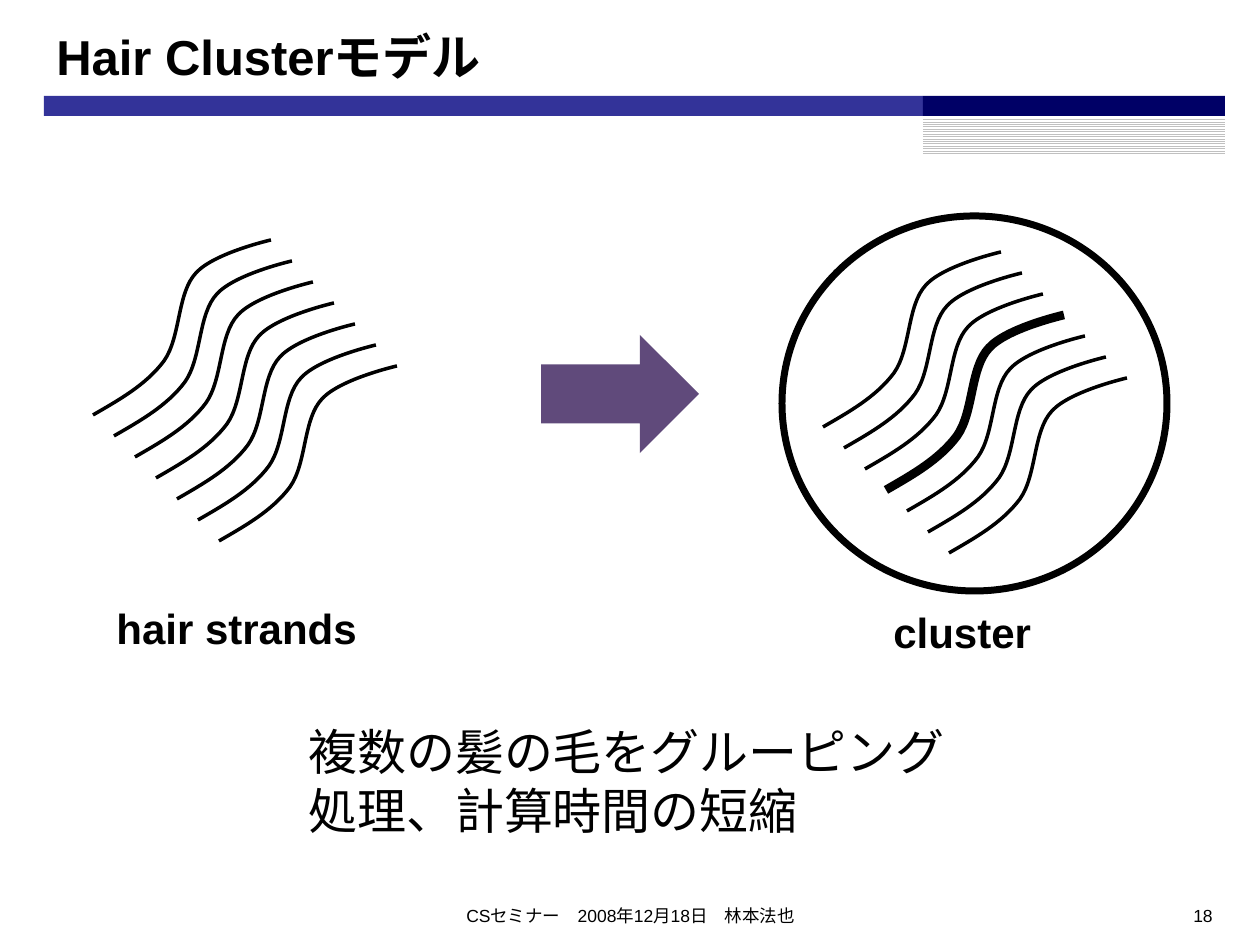
from dataclasses import dataclass

import lxml.etree
import pptx
import pptx.dml.color
import pptx.enum.dml
import pptx.enum.shapes
import pptx.enum.text
import pptx.oxml.ns
import pptx.util

EMU_PER_PX = 914400 / 126
SHAPE = pptx.enum.shapes.MSO_SHAPE
ALIGN = pptx.enum.text.PP_ALIGN
ANCHOR = pptx.enum.text.MSO_ANCHOR


@dataclass(frozen=True)
class Theme:
    font: str = "Arial"
    ink: str = "000000"
    paper: str = "FFFFFF"
    bar: str = "333399"
    bar_end: str = "000066"
    hatch: str = "C0C0C0"
    arrow: str = "604A7B"
    heading: int = 28
    label: int = 24
    footer: int = 10
    thin: int = 2
    ring: int = 4
    guide: int = 5


THEME = Theme()


@dataclass(frozen=True)
class Area:
    left: int
    top: int
    width: int
    height: int

    def emu(self) -> list[int]:
        return [px(n) for n in (self.left, self.top, self.width, self.height)]


@dataclass(frozen=True)
class Block:
    area: Area
    preset: SHAPE
    color: str


@dataclass(frozen=True)
class Caption:
    area: Area
    lines: tuple[str, ...]
    size: int
    bold: bool = False
    align: ALIGN = ALIGN.LEFT
    anchor: ANCHOR = ANCHOR.TOP
    wrap: bool = True


@dataclass(frozen=True)
class Bundle:
    left: int
    top: int
    label: Caption
    guide_index: int | None = None
    ring: Area | None = None


STRAND_COUNT = 7
STRAND_STEP = 21
STRAND_POINTS = (
    (0, 175),
    (26, 160), (53, 145), (71, 121),
    (88, 97), (84, 53), (103, 33),
    (121, 13), (178, 0), (178, 0),
)

BLOCKS = (
    Block(Area(44, 96, 879, 20), SHAPE.RECTANGLE, THEME.bar),
    Block(Area(923, 96, 302, 20), SHAPE.RECTANGLE, THEME.bar_end),
    Block(Area(541, 335, 158, 118), SHAPE.RIGHT_ARROW, THEME.arrow),
)
HATCH_AREA = Area(923, 117, 302, 38)

CAPTIONS = (
    Caption(Area(44, 16, 1182, 79), ("Hair Clusterモデル",), THEME.heading,
            bold=True, anchor=ANCHOR.MIDDLE),
    Caption(Area(431, 899, 399, 37), ("CSセミナー　2008年12月18日　林本法也",),
            THEME.footer, align=ALIGN.CENTER),
    Caption(Area(931, 899, 294, 37), ("18",), THEME.footer, align=ALIGN.RIGHT),
    Caption(Area(296, 715, 669, 131),
            ("複数の髪の毛をグルーピング", "処理、計算時間の短縮"),
            THEME.heading, wrap=False),
)

BUNDLES = (
    Bundle(93, 240, Caption(Area(104, 596, 268, 63), ("hair strands",),
                            THEME.label, bold=True, wrap=False)),
    Bundle(823, 252, Caption(Area(881, 600, 165, 63), ("cluster",),
                             THEME.label, bold=True, wrap=False),
           guide_index=3, ring=Area(782, 216, 385, 375)),
)


def px(value: float) -> int:
    return round(value * EMU_PER_PX)


def rgb(color: str) -> pptx.dml.color.RGBColor:
    return pptx.dml.color.RGBColor.from_string(color)


def outline(shape, width: int) -> None:
    shape.shadow.inherit = False
    shape.fill.background()
    shape.line.color.rgb = rgb(THEME.ink)
    shape.line.width = pptx.util.Pt(width)


def draw_block(shapes, block: Block) -> None:
    shape = shapes.add_shape(block.preset, *block.area.emu())
    shape.shadow.inherit = False
    shape.fill.solid()
    shape.fill.fore_color.rgb = rgb(block.color)
    shape.line.fill.background()


def draw_hatch(shapes, area: Area) -> None:
    shape = shapes.add_shape(SHAPE.RECTANGLE, *area.emu())
    shape.shadow.inherit = False
    shape.fill.patterned()
    shape.fill.pattern = pptx.enum.dml.MSO_PATTERN.LIGHT_HORIZONTAL
    shape.fill.fore_color.rgb = rgb(THEME.hatch)
    shape.fill.back_color.rgb = rgb(THEME.paper)
    shape.line.fill.background()


def draw_caption(shapes, caption: Caption) -> None:
    box = shapes.add_textbox(*caption.area.emu())
    frame = box.text_frame
    frame.word_wrap = caption.wrap
    frame.vertical_anchor = caption.anchor
    if not caption.wrap:
        frame.auto_size = pptx.enum.text.MSO_AUTO_SIZE.SHAPE_TO_FIT_TEXT
    frame.text = "\n".join(caption.lines)
    for para in frame.paragraphs:
        para.alignment = caption.align
        para.font.name = THEME.font
        para.font.size = pptx.util.Pt(caption.size)
        para.font.bold = caption.bold
        para.font.color.rgb = rgb(THEME.ink)


def bend(shape) -> None:
    qn = pptx.oxml.ns.qn
    segments = list(shape._element.iter(qn("a:lnTo")))
    for start in range(0, len(segments), 3):
        triple = segments[start:start + 3]
        curve = lxml.etree.SubElement(triple[0].getparent(), qn("a:cubicBezTo"))
        for segment in triple:
            curve.append(segment[0])
            segment.getparent().remove(segment)


def draw_strand(shapes, left: int, top: int, width: int) -> None:
    points = [(px(left + x), px(top + y)) for x, y in STRAND_POINTS]
    builder = shapes.build_freeform(*points[0])
    builder.add_line_segments(points[1:], close=False)
    strand = builder.convert_to_shape()
    bend(strand)
    outline(strand, width)


def draw_bundle(page, bundle: Bundle) -> None:
    shapes = page.shapes.add_group_shape().shapes
    for index in range(STRAND_COUNT):
        shift = index * STRAND_STEP
        width = THEME.guide if index == bundle.guide_index else THEME.thin
        draw_strand(shapes, bundle.left + shift, bundle.top + shift, width)
    if bundle.ring:
        outline(shapes.add_shape(SHAPE.OVAL, *bundle.ring.emu()), THEME.ring)
    draw_caption(shapes, bundle.label)


def main() -> None:
    deck = pptx.Presentation()
    deck.slide_width, deck.slide_height = px(1260), px(945)
    page = deck.slides.add_slide(deck.slide_layouts[6])
    draw_hatch(page.shapes, HATCH_AREA)
    for block in BLOCKS:
        draw_block(page.shapes, block)
    for bundle in BUNDLES:
        draw_bundle(page, bundle)
    for caption in CAPTIONS:
        draw_caption(page.shapes, caption)
    deck.save("out.pptx")


if __name__ == "__main__":
    main()
